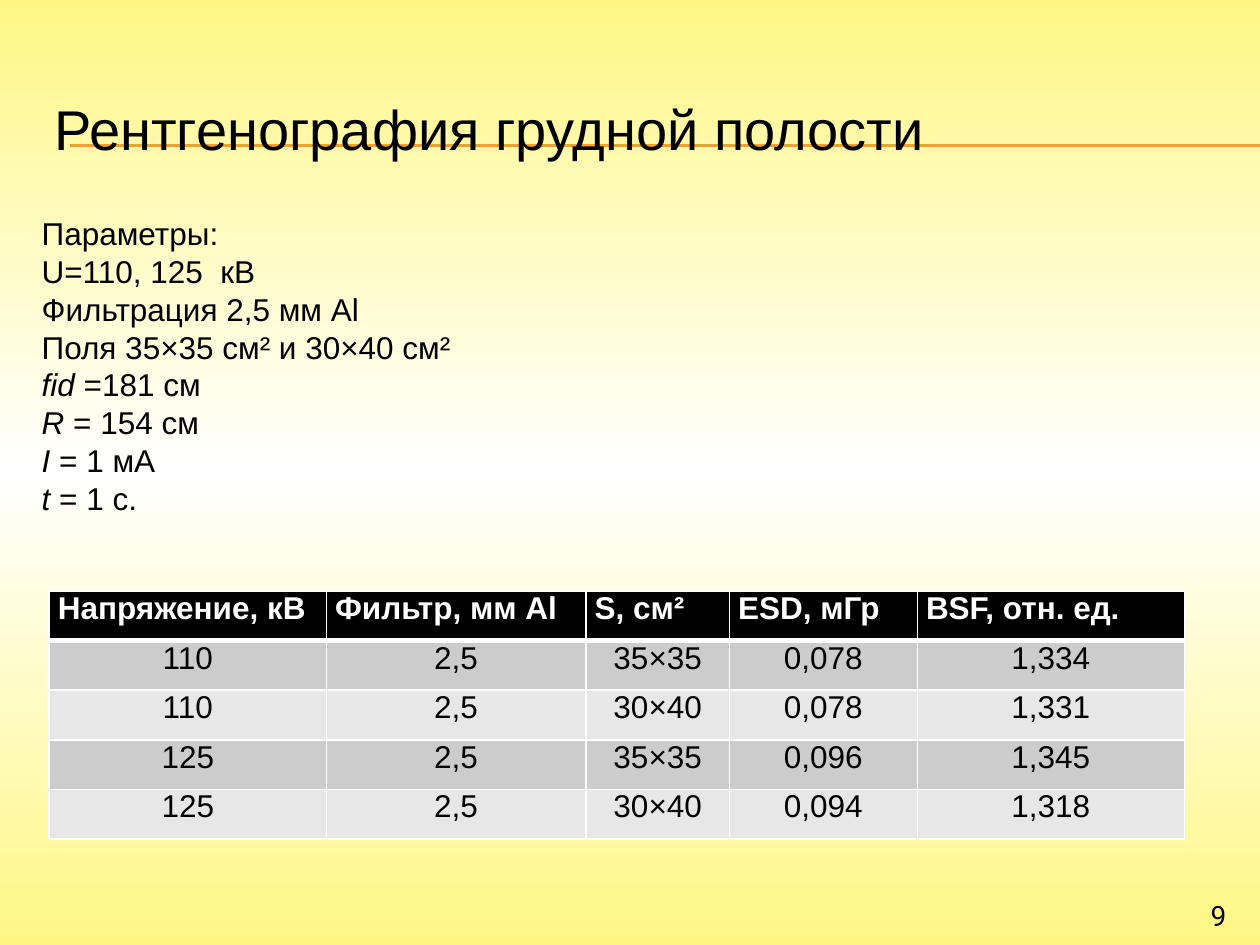
import copy

import pptx
import pptx.dml.color
import pptx.enum.shapes
import pptx.enum.text
import pptx.oxml
import pptx.oxml.ns
import pptx.util

Pt = pptx.util.Pt
ALIGN = pptx.enum.text.PP_ALIGN
ANCHOR = pptx.enum.text.MSO_ANCHOR

COLORS = {
    "text": "000000", "white": "FFFFFF", "rule": "F0A22E", "edge": "FFF784",
    "header": "000000", "odd": "CCCCCC", "even": "E7E7E7",
}
TITLE = "Рентгенография грудной полости"
PARAMETERS = [  # (italic symbol, plain text)
    ("", "Параметры:"),
    ("", "U=110, 125  кВ"),
    ("", "Фильтрация 2,5 мм Al"),
    ("", "Поля 35×35 см² и 30×40 см²"),
    ("fid", " =181 см"),
    ("R ", "= 154 см"),
    ("I ", "= 1 мА"),
    ("t ", "= 1 с."),
]
TABLE = [
    ["Напряжение, кВ", "Фильтр, мм Al", "S, см²", "ESD, мГр", "BSF, отн. ед."],
    ["110", "2,5", "35×35", "0,078", "1,334"],
    ["110", "2,5", "30×40", "0,078", "1,331"],
    ["125", "2,5", "35×35", "0,096", "1,345"],
    ["125", "2,5", "30×40", "0,094", "1,318"],
]
COLUMN_WIDTHS = [158.4, 148.3, 82.1, 107.3, 152.6]
ROW_HEIGHT = 28.37
PAGE_NUMBER = "9"


def color(name):
    return pptx.dml.color.RGBColor.from_string(COLORS[name])


def format_run(run, size, color_name="text", font="Arial", bold=False, italic=False):
    run.font.name = font
    run.font.size = Pt(size)
    run.font.color.rgb = color(color_name)
    run.font.bold = bold
    run.font.italic = italic


def place(shape, left, top, width, height):
    shape.left, shape.top = Pt(left), Pt(top)
    shape.width, shape.height = Pt(width), Pt(height)


def set_insets(target, horizontal, vertical):
    target.margin_left = target.margin_right = Pt(horizontal)
    target.margin_top = target.margin_bottom = Pt(vertical)


def paint_background(slide):
    fill = slide.background.fill
    fill.gradient()
    fill.gradient_angle = 270
    first_stop = fill._fill._gradFill.find(pptx.oxml.ns.qn("a:gsLst"))[0]
    first_stop.addnext(copy.deepcopy(first_stop))
    for stop, (position, name) in zip(
            fill.gradient_stops, [(0, "edge"), (0.5, "white"), (1, "edge")]):
        stop.position = position
        stop.color.rgb = color(name)


def add_rule(slide, top):
    """Draw a line to the right slide edge, behind the text."""
    line = slide.shapes.add_connector(
        pptx.enum.shapes.MSO_CONNECTOR.STRAIGHT, Pt(40.3), Pt(top), Pt(720), Pt(top))
    line.line.color.rgb = color("rule")
    line.line.width = Pt(0.75)
    properties = line._element.spPr
    properties.append(properties.makeelement(pptx.oxml.ns.qn("a:effectLst"), {}))
    slide.shapes._spTree.insert(2, line._element)


def add_title(slide):
    title = slide.shapes.title
    place(title, 23.8, 40.3, 684, 66.2)
    frame = title.text_frame
    frame.text = TITLE
    frame.vertical_anchor = ANCHOR.MIDDLE
    frame.paragraphs[0].alignment = ALIGN.LEFT
    format_run(frame.paragraphs[0].runs[0], 32)


def add_parameters(slide):
    body = slide.placeholders[1]
    place(body, 23.8, 122.4, 334, 193)
    frame = body.text_frame
    set_insets(frame, 0, 0)
    frame.text = "\n".join(symbol + text for symbol, text in PARAMETERS)
    for paragraph, parts in zip(frame.paragraphs, PARAMETERS):
        paragraph.text = ""
        paragraph.line_spacing = Pt(21.6)
        paragraph.space_before = Pt(0)
        properties = paragraph._p.get_or_add_pPr()
        properties.set("marL", "0")
        properties.set("indent", "0")
        properties.append(properties.makeelement(pptx.oxml.ns.qn("a:buNone"), {}))
        for part, italic in zip(parts, (True, False)):
            if part:
                run = paragraph.add_run()
                run.text = part
                format_run(run, 18, italic=italic)


def set_borders(cell, bottom_width):
    """Give the cell white edges, 1 pt except the bottom one."""
    properties = cell._tc.get_or_add_tcPr()
    widths = {"lnL": 1, "lnR": 1, "lnT": 1, "lnB": bottom_width}
    for index, (tag, width) in enumerate(widths.items()):
        properties.insert(index, pptx.oxml.parse_xml(
            f'<a:{tag} {pptx.oxml.ns.nsdecls("a")} w="{Pt(width)}"><a:solidFill>'
            f'<a:srgbClr val="{COLORS["white"]}"/></a:solidFill></a:{tag}>'))


def add_dose_table(slide):
    table = slide.shapes.add_table(
        len(TABLE), len(COLUMN_WIDTHS), Pt(28.1), Pt(337.7),
        Pt(sum(COLUMN_WIDTHS)), Pt(ROW_HEIGHT * len(TABLE))).table
    for column, width in zip(table.columns, COLUMN_WIDTHS):
        column.width = Pt(width)
    for row_index, values in enumerate(TABLE):
        table.rows[row_index].height = Pt(ROW_HEIGHT)
        header = row_index == 0
        fill_name = "header" if header else "odd" if row_index % 2 else "even"
        for column_index, value in enumerate(values):
            cell = table.cell(row_index, column_index)
            cell.text = value
            set_insets(cell, 5, 0)
            cell.fill.solid()
            cell.fill.fore_color.rgb = color(fill_name)
            set_borders(cell, 3 if header else 1)
            paragraph = cell.text_frame.paragraphs[0]
            paragraph.alignment = ALIGN.LEFT if header else ALIGN.CENTER
            format_run(paragraph.runs[0], 18, "white" if header else "text", bold=header)


def add_page_number(slide):
    box = slide.shapes.add_textbox(Pt(648), Pt(509.8), Pt(59.8), Pt(19.4))
    box.text_frame.word_wrap = True
    box.text_frame.text = PAGE_NUMBER
    paragraph = box.text_frame.paragraphs[0]
    paragraph.alignment = ALIGN.RIGHT
    format_run(paragraph.runs[0], 16, font="Roboto")


def main():
    presentation = pptx.Presentation()
    presentation.slide_width, presentation.slide_height = Pt(720), Pt(540)
    slide = presentation.slides.add_slide(presentation.slide_layouts[1])
    paint_background(slide)
    for top in (82.8, 83.5):
        add_rule(slide, top)
    add_title(slide)
    add_parameters(slide)
    add_dose_table(slide)
    add_page_number(slide)
    presentation.save("out.pptx")


if __name__ == "__main__":
    main()
